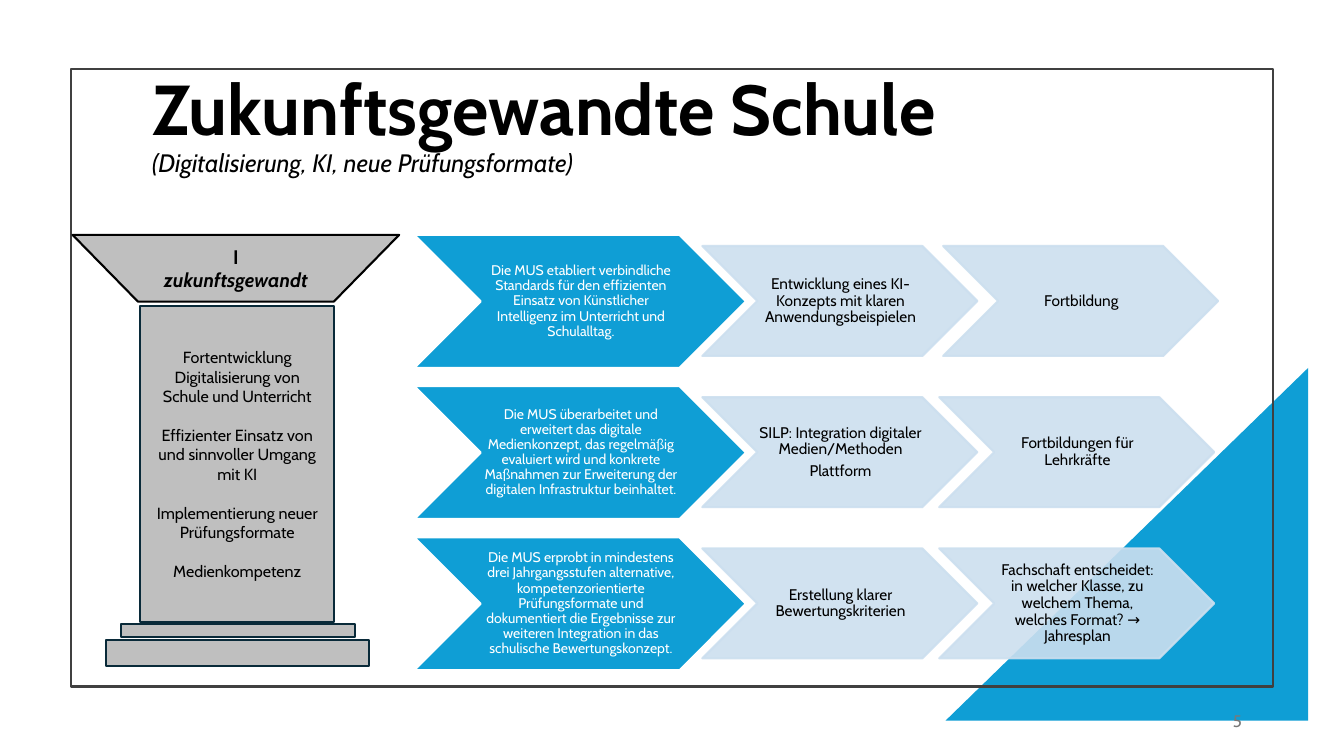
from dataclasses import dataclass

from lxml.etree import SubElement
from pptx import Presentation
from pptx.dml.color import RGBColor
from pptx.enum.shapes import MSO_SHAPE
from pptx.enum.text import MSO_ANCHOR, MSO_AUTO_SIZE, PP_ALIGN
from pptx.oxml.ns import qn
from pptx.util import Cm, Pt


@dataclass(frozen=True)
class Theme:
    font: str = "Cabin"
    blue: str = "0F9ED5"
    pale: str = "CCDFEF"
    stone: str = "BFBFBF"
    edge: str = "092A39"
    frame: str = "404040"
    black: str = "000000"
    white: str = "FFFFFF"
    grey: str = "797979"
    title: float = 50.4
    subtitle: float = 18
    capital: float = 14
    shaft: float = 11.5
    step: float = 11
    goal: float = 10
    number: float = 12


theme = Theme()
presentation = Presentation()
presentation.slide_width, presentation.slide_height = Cm(33.87), Cm(19.05)
slide = presentation.slides.add_slide(presentation.slide_layouts[5])


def add_block(kind, box, fill=None, line=None):
    block = slide.shapes.add_shape(kind, *map(Cm, box))
    block.shadow.inherit = False
    if fill:
        block.fill.solid()
        block.fill.fore_color.rgb = RGBColor.from_string(fill)
    else:
        block.fill.background()
    if line:
        block.line.color.rgb = RGBColor.from_string(line)
        block.line.width = Pt(1.5)
    else:
        block.line.fill.background()
    return block


def write(block, text, size, color, align=PP_ALIGN.CENTER, spacing=1.0, gap=0):
    frame = block.text_frame
    frame.text = text
    frame.word_wrap = True
    frame.auto_size = MSO_AUTO_SIZE.NONE
    frame.vertical_anchor = MSO_ANCHOR.MIDDLE
    for index, paragraph in enumerate(frame.paragraphs):
        paragraph.alignment = align
        paragraph.line_spacing = spacing
        paragraph.space_before = Pt(gap if index else 0)
        for run in paragraph.runs:
            run.font.name = theme.font
            run.font.size = Pt(size)
            run.font.color.rgb = RGBColor.from_string(color)
    return frame


corner = add_block(MSO_SHAPE.RIGHT_TRIANGLE, (23.83, 9.27, 9.14, 8.89), theme.blue)
corner.element.spPr.find(qn("a:xfrm")).set("flipH", "1")
add_block(MSO_SHAPE.RECTANGLE, (1.78, 1.73, 30.3, 15.57), line=theme.frame)

heading = slide.shapes.title
heading.left, heading.top, heading.width, heading.height = map(Cm, (3.58, 2.16, 22.43, 2.06))
heading_frame = write(
    heading,
    "Zukunftsgewandte Schule\v(Digitalisierung, KI, neue Prüfungsformate)",
    theme.title, theme.black, PP_ALIGN.LEFT, 0.9,
)
name, topics = heading_frame.paragraphs[0].runs
name.font.bold = True
topics.font.size = Pt(theme.subtitle)
topics.font.bold = False
topics.font.italic = True

measures = [
    (
        "Die MUS etabliert verbindliche Standards für den effizienten Einsatz von "
        "Künstlicher Intelligenz im Unterricht und Schulalltag.",
        "Entwicklung eines KI-Konzepts mit klaren Anwendungsbeispielen",
        "Fortbildung",
        23.77,
    ),
    (
        "Die MUS überarbeitet und erweitert das digitale Medienkonzept, das regelmäßig "
        "evaluiert wird und konkrete Maßnahmen zur Erweiterung der digitalen "
        "Infrastruktur beinhaltet.",
        "SILP: Integration digitaler Medien/Methoden\nPlattform",
        "Fortbildungen für Lehrkräfte",
        23.67,
    ),
    (
        "Die MUS erprobt in mindestens drei Jahrgangsstufen alternative, "
        "kompetenzorientierte Prüfungsformate und dokumentiert die Ergebnisse zur "
        "weiteren Integration in das schulische Bewertungskonzept.",
        "Erstellung klarer Bewertungskriterien",
        "Fachschaft entscheidet: in welcher Klasse, zu welchem Thema, "
        "welches Format? → Jahresplan",
        23.67,
    ),
]
for row, (goal, first_step, second_step, second_left) in enumerate(measures):
    top = 5.92 + row * 3.81
    chevrons = [
        (goal, (10.44, top, 8.36, 3.35), theme.blue, theme.white, theme.goal, theme.white),
        (first_step, (17.7, top + 0.28, 6.93, 2.77), theme.pale, theme.pale, theme.step, theme.black),
        (second_step, (second_left, top + 0.28, 6.93, 2.77), theme.pale, theme.pale, theme.step, theme.black),
    ]
    for text, box, fill, line, size, color in chevrons:
        chevron = add_block(MSO_SHAPE.CHEVRON, box, fill, line)
        if fill == theme.pale:
            for tint in chevron.element.spPr.iter(qn("a:srgbClr")):
                SubElement(tint, qn("a:alpha")).set("val", "90000")
        chevron_frame = write(chevron, text, size, color, spacing=0.9, gap=3.5)
        chevron_frame.margin_left = Cm(0.04)
        chevron_frame.margin_right = 0
        chevron_frame.margin_top = chevron_frame.margin_bottom = Cm(0.03)

for plinth in ((3.05, 15.72, 5.89, 0.33), (2.67, 16.13, 6.63, 0.66)):
    add_block(MSO_SHAPE.RECTANGLE, plinth, theme.stone, theme.edge)

shaft = add_block(MSO_SHAPE.RECTANGLE, (3.53, 7.72, 4.9, 7.95), theme.stone, theme.edge)
aims = [
    "Fortentwicklung Digitalisierung von Schule und Unterricht",
    "Effizienter Einsatz von und sinnvoller Umgang mit KI",
    "Implementierung neuer Prüfungsformate",
    "Medienkompetenz",
]
write(shaft, "\n".join(aims), theme.shaft, theme.black, gap=14)

capital = add_block(
    MSO_SHAPE.FLOWCHART_MANUAL_OPERATION, (1.83, 5.92, 8.23, 1.68), theme.stone, theme.black
)
capital_frame = write(capital, "I\nzukunftsgewandt", theme.capital, theme.black)
for paragraph in capital_frame.paragraphs:
    paragraph.runs[0].font.bold = True
capital_frame.paragraphs[1].runs[0].font.italic = True

page_number = slide.shapes.add_textbox(*map(Cm, (23.93, 17.65, 7.62, 1.02)))
write(page_number, "5", theme.number, theme.grey, PP_ALIGN.RIGHT)

presentation.save("out.pptx")
